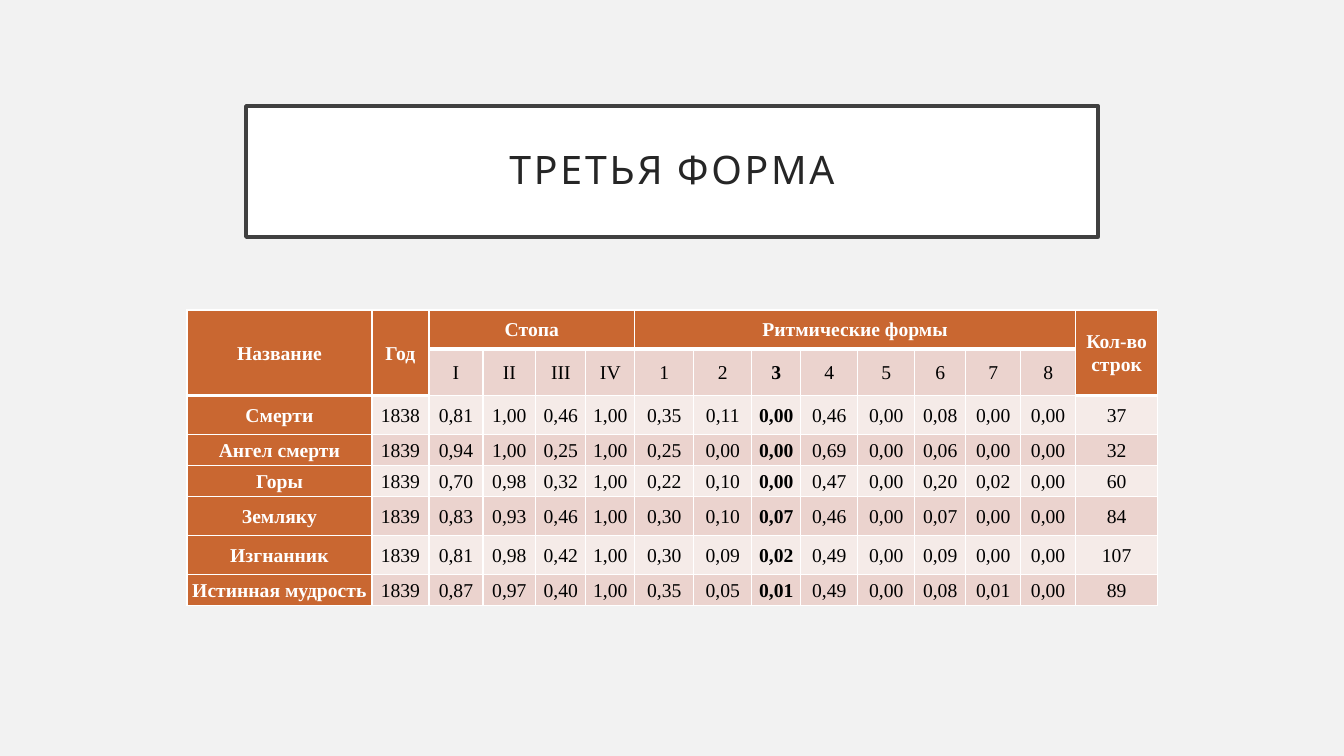
from dataclasses import dataclass

import pptx
import pptx.dml.color
import pptx.enum.shapes
import pptx.enum.text
import pptx.oxml
import pptx.oxml.ns
import pptx.util

SCALE = 914400 / 100.8
RUST, ROSE, PALE = "C96731", "EBD3CE", "F5EBE8"
WHITE, BLACK = "FFFFFF", "000000"
WIDTHS = [185, 57, 54, 53, 50, 49, 59, 58, 49, 57, 57, 51, 55, 55, 82]
TALL, SHORT = 39, 31
BOLD = 8


@dataclass
class Head:
    text: str
    col: int
    rows: int
    cols: int


@dataclass
class Poem:
    name: str
    year: str
    feet: str
    forms: str
    lines: str
    tight: bool = False

    def cells(self) -> list[str]:
        return [self.name, self.year, *self.feet.split(), *self.forms.split(), self.lines]


HEADS = [
    Head("Название", 0, 2, 1),
    Head("Год", 1, 2, 1),
    Head("Стопа", 2, 1, 4),
    Head("Ритмические формы", 6, 1, 8),
    Head("Кол-во строк", 14, 2, 1),
]
ROWS = [
    Poem("", "", "", "", ""),
    Poem("", "", "I II III IV", "1 2 3 4 5 6 7 8", ""),
    Poem("Смерти", "1838", "0,81 1,00 0,46 1,00",
         "0,35 0,11 0,00 0,46 0,00 0,08 0,00 0,00", "37"),
    Poem("Ангел смерти", "1839", "0,94 1,00 0,25 1,00",
         "0,25 0,00 0,00 0,69 0,00 0,06 0,00 0,00", "32", True),
    Poem("Горы", "1839", "0,70 0,98 0,32 1,00",
         "0,22 0,10 0,00 0,47 0,00 0,20 0,02 0,00", "60", True),
    Poem("Земляку", "1839", "0,83 0,93 0,46 1,00",
         "0,30 0,10 0,07 0,46 0,00 0,07 0,00 0,00", "84"),
    Poem("Изгнанник", "1839", "0,81 0,98 0,42 1,00",
         "0,30 0,09 0,02 0,49 0,00 0,09 0,00 0,00", "107"),
    Poem("Истинная мудрость", "1839", "0,87 0,97 0,40 1,00",
         "0,35 0,05 0,01 0,49 0,00 0,08 0,01 0,00", "89", True),
]
DEEP = {head.col for head in HEADS if head.rows == 2}


def px(size: int) -> int:
    return round(size * SCALE)


def tint(code: str) -> pptx.dml.color.RGBColor:
    return pptx.dml.color.RGBColor.from_string(code)


def paint(fill, code: str) -> None:
    fill.solid()
    fill.fore_color.rgb = tint(code)


def write(frame, text: str, *, font: str, size: int, color: str, bold: bool = False,
          lead: float = 1.0, after: int = 0, track: int = 0) -> None:
    frame.word_wrap = True
    para = frame.paragraphs[0]
    para.alignment = pptx.enum.text.PP_ALIGN.CENTER
    para.line_spacing = lead
    para.space_before = pptx.util.Pt(0)
    para.space_after = pptx.util.Pt(after)
    run = para.add_run()
    run.text = text
    run.font.name = font
    run.font.size = pptx.util.Pt(size)
    run.font.bold = bold
    run.font.color.rgb = tint(color)
    if track:
        run.font._element.set("spc", str(track * 100))


def inset(box, side: int, edge: int) -> None:
    box.margin_left = box.margin_right = px(side)
    box.margin_top = box.margin_bottom = px(edge)
    box.vertical_anchor = pptx.enum.text.MSO_ANCHOR.MIDDLE


def border(cell, top: int, base: int) -> None:
    props = cell._tc.get_or_add_tcPr()
    space = pptx.oxml.ns.nsdecls("a")
    for spot, (side, size) in enumerate(zip("LRTB", (1, 1, top, base))):
        props.insert(spot, pptx.oxml.parse_xml(
            f'<a:ln{side} {space} w="{pptx.util.Pt(size)}"><a:solidFill>'
            f'<a:srgbClr val="{WHITE}"/></a:solidFill></a:ln{side}>'))


def title(slide) -> None:
    box = slide.shapes.add_shape(pptx.enum.shapes.MSO_SHAPE.RECTANGLE,
                                 px(246), px(106), px(852), px(131))
    box.shadow.inherit = False
    paint(box.fill, WHITE)
    box.line.color.rgb = tint("404040")
    box.line.width = pptx.util.Pt(2.5)
    inset(box.text_frame, 20, 20)
    write(box.text_frame, "ТРЕТЬЯ ФОРМА", font="Cabin", size=28, color="262626",
          lead=0.9, track=2)


def entry(cell, text: str, strong: bool, white: bool) -> None:
    write(cell.text_frame, text, font="Times New Roman", size=14,
          color=WHITE if white else BLACK, bold=strong, lead=1.07, after=8)


def table(slide) -> None:
    highs = [SHORT if row.tight else TALL for row in ROWS]
    grid = slide.shapes.add_table(len(ROWS), len(WIDTHS), px(187), px(310),
                                  px(sum(WIDTHS)), px(sum(highs))).table
    for col, width in zip(grid.columns, WIDTHS):
        col.width = px(width)
    for line, high in zip(grid.rows, highs):
        line.height = px(high)
    for r, row in enumerate(ROWS):
        texts = row.cells() if r else [""] * len(WIDTHS)
        if r == 1:
            texts = ["", "", *row.feet.split(), *row.forms.split(), ""]
        for c, text in enumerate(texts):
            cell = grid.cell(r, c)
            dark = r == 0 or c == 0 or (r == 1 and c in DEEP)
            paint(cell.fill, RUST if dark else ROSE if r % 2 else PALE)
            inset(cell, 0 if row.tight else 6, 0)
            border(cell, 3 if r == 2 and c in DEEP else 1,
                   3 if r == 0 or (r == 1 and c in DEEP) else 1)
            if text:
                entry(cell, text, dark or c == BOLD, dark)
    for head in HEADS:
        cell = grid.cell(0, head.col)
        cell.merge(grid.cell(head.rows - 1, head.col + head.cols - 1))
        entry(cell, head.text, True, True)


def main() -> None:
    deck = pptx.Presentation()
    deck.slide_width, deck.slide_height = px(1344), px(756)
    slide = deck.slides.add_slide(deck.slide_layouts[6])
    paint(slide.background.fill, "F2F2F2")
    title(slide)
    table(slide)
    deck.save("out.pptx")


if __name__ == "__main__":
    main()
